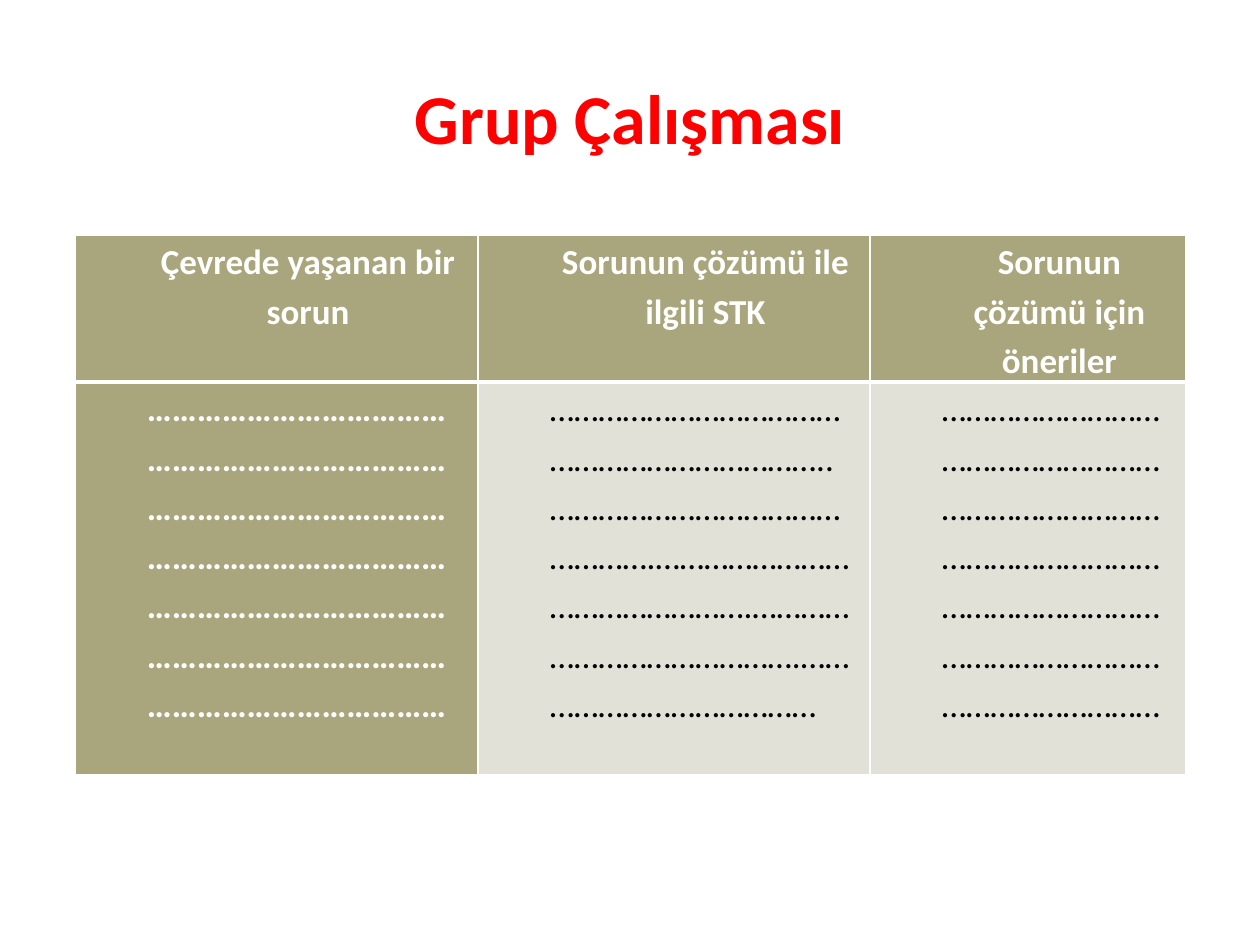
"""Build the group work slide with its three-column worksheet table."""
from lxml import etree
from pptx import Presentation
from pptx import util as u
from pptx.dml.color import RGBColor
from pptx.enum import text
from pptx.oxml import ns

PX = 914400 / 126
RED = RGBColor(0xFF, 0x00, 0x00)
WHITE = RGBColor(0xFF, 0xFF, 0xFF)
BLACK = RGBColor(0x00, 0x00, 0x00)
OLIVE = RGBColor(0xA9, 0xA5, 0x7C)
PALE = RGBColor(0xE2, 0xE1, 0xD7)


def px(length):
    return u.Emu(round(length * PX))


def add_span(para, words, size, color, bold):
    span = para.add_run()
    span.text = words
    span.font.name = "Calibri"
    span.font.size = u.Pt(size)
    span.font.bold = bold
    span.font.color.rgb = color


deck = Presentation()
deck.slide_width, deck.slide_height = px(1260), px(945)
page = deck.slides.add_slide(deck.slide_layouts[6])

title = page.shapes.add_textbox(px(63), px(38), px(1134), px(157)).text_frame
title.word_wrap = True
title.vertical_anchor = text.MSO_ANCHOR.MIDDLE
title.paragraphs[0].alignment = text.PP_ALIGN.CENTER
add_span(title.paragraphs[0], "Grup Çalışması", 40, RED, True)

widths = [403, 392, 316]
heights = [147, 393]
headings = ["Çevrede yaşanan bir sorun", "Sorunun çözümü ile ilgili STK", "Sorunun çözümü için öneriler"]
dots = "………………………………"
answers = [
    [dots] * 4 + ["………………………………………………………………", dots],
    [
        "……………………………………………………………..",
        "………………………………………….………………………………………….…………………………………….…………………………………",
    ],
    ["………………………………………………………………………………………………………………………………………………………………………"],
]
rows = [[[heading] for heading in headings], answers]

table = page.shapes.add_table(2, 3, px(75), px(235), px(sum(widths)), px(sum(heights))).table
table.horz_banding = False
for column, width in zip(table.columns, widths):
    column.width = px(width)
for row, height in zip(table.rows, heights):
    row.height = px(height)

for row_index, row in enumerate(rows):
    for column_index, lines in enumerate(row):
        cell = table.cell(row_index, column_index)
        shaded = row_index == 0 or column_index == 0
        cell.margin_left = cell.margin_right = px(9)
        cell.margin_top = cell.margin_bottom = 0
        cell.fill.solid()
        cell.fill.fore_color.rgb = OLIVE if shaded else PALE

        heavy = "lnB" if row_index == 0 else "lnT"
        properties = cell._tc.get_or_add_tcPr()
        for position, side in enumerate(["lnL", "lnR", "lnT", "lnB"]):
            border = etree.Element(ns.qn("a:" + side), w=str(u.Pt(3 if side == heavy else 1)))
            fill = etree.SubElement(border, ns.qn("a:solidFill"))
            etree.SubElement(fill, ns.qn("a:srgbClr"), val=str(WHITE))
            properties.insert(position, border)

        for line_index, line in enumerate(lines):
            frame = cell.text_frame
            para = frame.add_paragraph() if line_index else frame.paragraphs[0]
            indents = para._p.get_or_add_pPr()
            indents.set("marL", str(px(63)))
            indents.set("indent", "0")
            tabs = etree.SubElement(indents, ns.qn("a:tabLst"))
            etree.SubElement(tabs, ns.qn("a:tab"), pos=str(px(38)), algn="l")
            para.line_spacing = 1.15
            para.alignment = text.PP_ALIGN.JUSTIFY if row_index else text.PP_ALIGN.CENTER
            add_span(para, line, 20, WHITE if shaded else BLACK, shaded)

deck.save("out.pptx")
